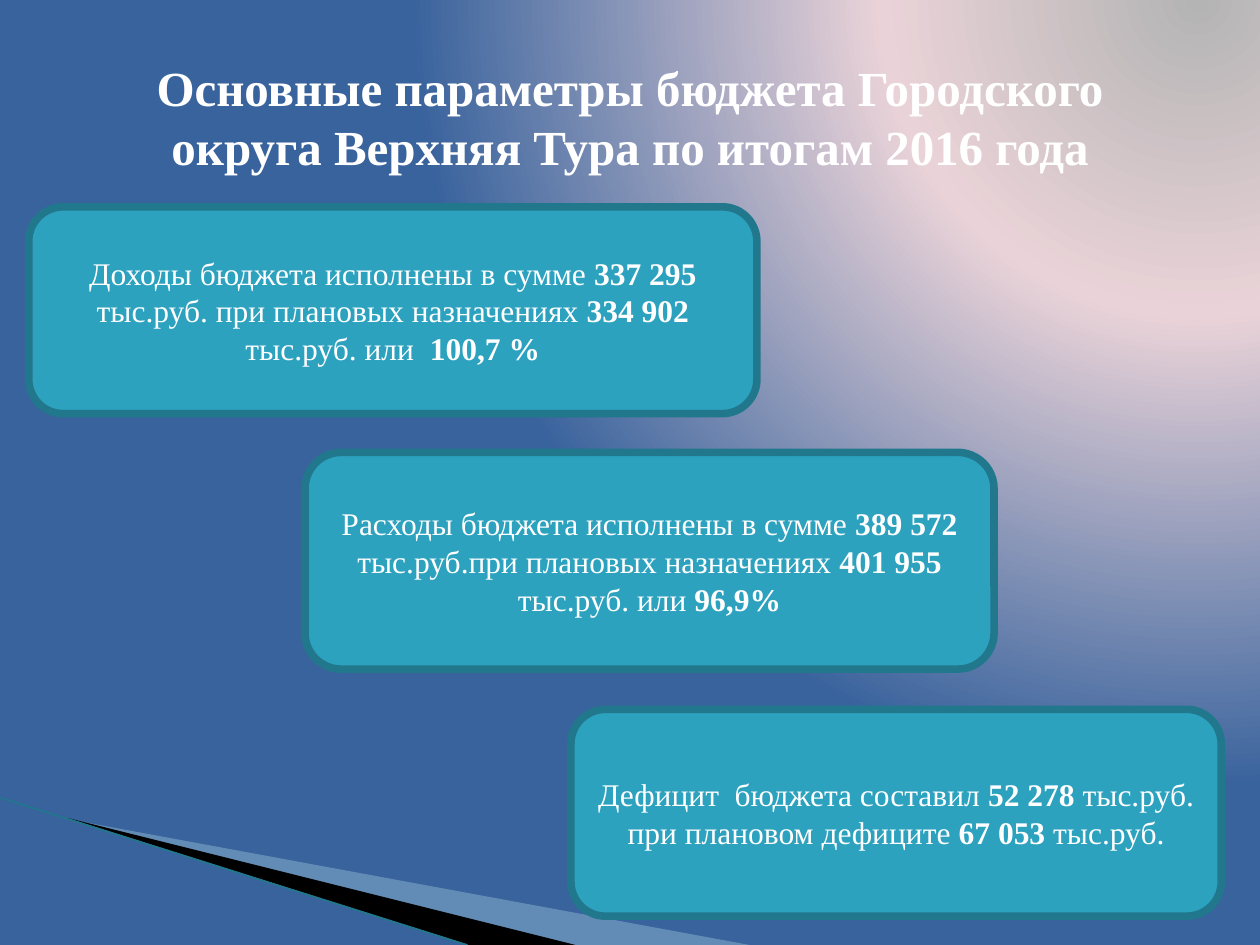
import pptx
import pptx.util
import pptx.oxml
import pptx.oxml.ns
import pptx.dml.color
import pptx.enum.shapes
import pptx.enum.text

Cm, Pt = pptx.util.Cm, pptx.util.Pt
RGB = pptx.dml.color.RGBColor
NS = pptx.oxml.ns.nsdecls("a")

HUES = {
    "text": "FFFFFF", "card": "2DA2BF", "edge": "21788D",
    "pale": "A0CBDC", "dark": "000000",
    "grey": "B4B4B4", "pink": "EAD3D8", "blue": "39639D",
}
GLOW = [(0, "grey"), (40, "pink"), (100, "blue")]
TITLE = "Основные параметры бюджета Городского округа Верхняя Тура по итогам 2016 года"

# Left, top, width, height in cm; text pieces alternate plain and bold
CARDS = [
    ((0.58, 4.17, 14.68, 4.17),
     ["Доходы бюджета исполнены в сумме ", "337 295 ",
      "тыс.руб. при плановых назначениях ", "334 902 ",
      "тыс.руб. или  ", "100,7 %"]),
    ((6.15, 9.12, 13.89, 4.37),
     ["Расходы бюджета исполнены в сумме ", "389 572 ",
      "тыс.руб.при плановых назначениях ", "401 955 ",
      "тыс.руб. или ", "96,9%"]),
    ((11.51, 14.3, 13.11, 4.17),
     ["Дефицит  бюджета составил ", "52 278 ",
      "тыс.руб. при плановом дефиците ", "67 053 ", "тыс.руб."]),
]

# Corner wedges: fill, opacity in percent, points in cm
WEDGES = [
    ("pale", 40, [(1.4, 16.52), (15.11, 19.05), (11.58, 19.05)]),
    ("dark", 100, [(1.36, 16.49), (11.6, 19.05), (9.45, 19.05)]),
]
RAY = (0, 16.08, 9.42, 19.05)


def tint(hue):
    return RGB.from_string(HUES[hue])


def write(frame, parts, size):
    """Fill a frame with one centred paragraph of (text, bold) parts."""
    frame.word_wrap = True
    frame.vertical_anchor = pptx.enum.text.MSO_ANCHOR.MIDDLE
    para = frame.paragraphs[0]
    para.alignment = pptx.enum.text.PP_ALIGN.CENTER
    for text, bold in parts:
        run = para.add_run()
        run.text = text
        look = {"name": "Times New Roman", "size": Pt(size), "bold": bold}
        for key, val in look.items():
            setattr(run.font, key, val)
        run.font.color.rgb = tint("text")


deck = pptx.Presentation()
deck.slide_width, deck.slide_height = Cm(25.4), Cm(19.05)
slide = deck.slides.add_slide(deck.slide_layouts[6])
shapes = slide.shapes

# Background glow, centred near the top right corner
slide.background.fill.solid()
flat = slide.element.xpath(".//p:bgPr/a:solidFill")[0]
stops = "".join(
    f'<a:gs pos="{pos * 1000}"><a:srgbClr val="{HUES[hue]}"/></a:gs>'
    for pos, hue in GLOW)
flat.getparent().replace(flat, pptx.oxml.parse_xml(
    f'<a:gradFill {NS} rotWithShape="1"><a:gsLst>{stops}</a:gsLst>'
    '<a:path path="circle"><a:fillToRect l="95000" t="-106000" '
    'r="5000" b="206000"/></a:path></a:gradFill>'))

# Corner wedges
for hue, alpha, dots in WEDGES:
    dots = [(Cm(x), Cm(y)) for x, y in dots]
    pen = shapes.build_freeform(*dots[0])
    pen.add_line_segments(dots[1:], close=True)
    wedge = pen.convert_to_shape()
    wedge.shadow.inherit = False
    wedge.fill.solid()
    wedge.fill.fore_color.rgb = tint(hue)
    wedge.line.fill.background()
    if alpha < 100:
        clr = wedge.element.xpath("./p:spPr/a:solidFill/a:srgbClr")[0]
        clr.append(pptx.oxml.parse_xml(f'<a:alpha {NS} val="{alpha * 1000}"/>'))

# Thin ray along the wedges
ray = shapes.add_connector(
    pptx.enum.shapes.MSO_CONNECTOR.STRAIGHT, *map(Cm, RAY))
ray.line.color.rgb = tint("edge")
ray.line.width = Pt(0.95)
ray.element.spPr.append(pptx.oxml.parse_xml(f"<a:effectLst {NS}/>"))

# Title
head = shapes.add_textbox(Cm(1.27), Cm(0.76), Cm(22.86), Cm(3.18))
head.text_frame.margin_left = head.text_frame.margin_right = Cm(0.5)
write(head.text_frame, [(TITLE, True)], 28)

# Cards
for place, texts in CARDS:
    card = shapes.add_shape(
        pptx.enum.shapes.MSO_SHAPE.ROUNDED_RECTANGLE, *map(Cm, place))
    card.shadow.inherit = False
    card.fill.solid()
    card.fill.fore_color.rgb = tint("card")
    card.line.color.rgb = tint("edge")
    card.line.width = Pt(4.33)
    write(card.text_frame,
          [(text, i % 2 == 1) for i, text in enumerate(texts)], 18)

deck.save("out.pptx")
